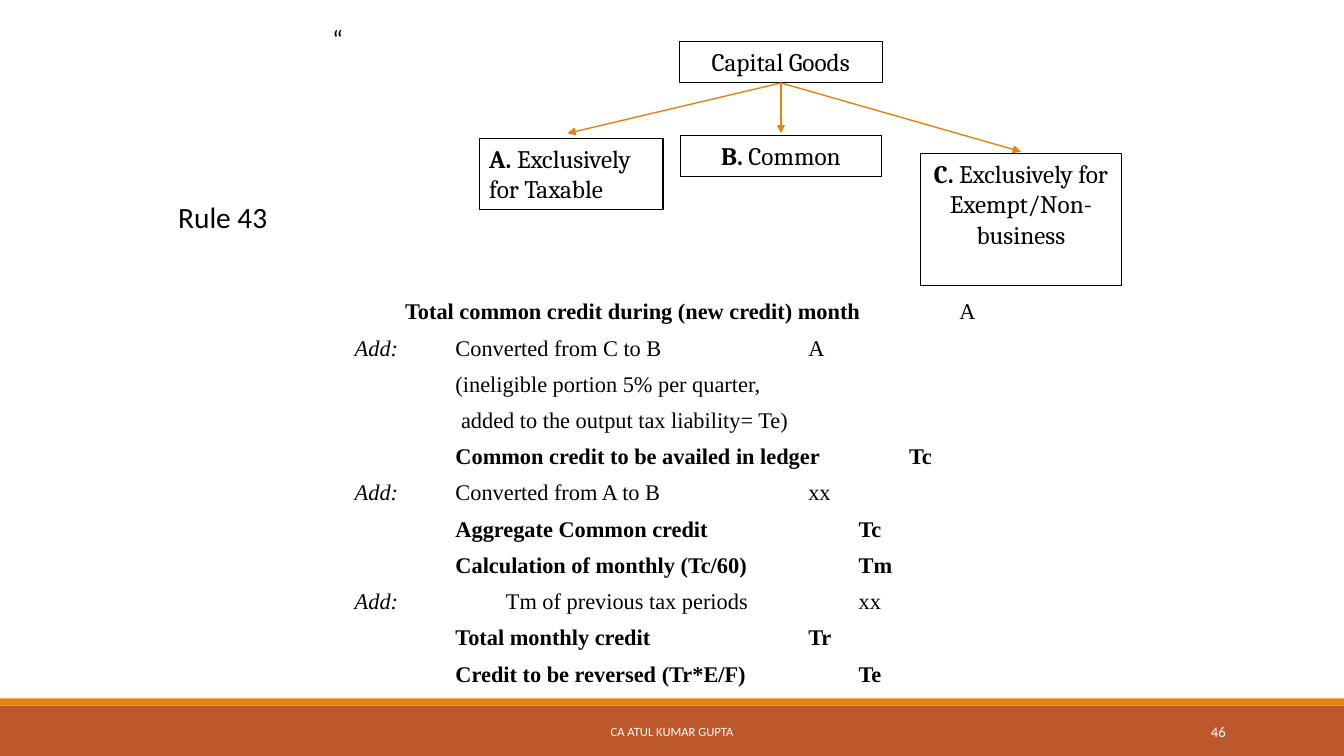
import pptx
import pptx.util
import pptx.dml.color
import pptx.enum.shapes
import pptx.enum.text
import pptx.oxml.ns
import lxml.etree

Cm = pptx.util.Cm
Pt = pptx.util.Pt
RGBColor = pptx.dml.color.RGBColor
ALIGN = pptx.enum.text.PP_ALIGN
ANCHOR = pptx.enum.text.MSO_ANCHOR
RECTANGLE = pptx.enum.shapes.MSO_SHAPE.RECTANGLE
STRAIGHT = pptx.enum.shapes.MSO_CONNECTOR.STRAIGHT
qn = pptx.oxml.ns.qn

BLACK = RGBColor(0x00, 0x00, 0x00)
WHITE = RGBColor(0xFF, 0xFF, 0xFF)
RUST = RGBColor(0xBD, 0x58, 0x2C)
ORANGE = RGBColor(0xE4, 0x83, 0x12)
TAB = 1.27  # width of one tab step in cm


def set_font(para, name, size, color):
    para.font.name = name
    para.font.size = Pt(size)
    para.font.color.rgb = color


def add_rectangle(left, top, width, height):
    box = page.shapes.add_shape(RECTANGLE, Cm(left), Cm(top), Cm(width), Cm(height))
    box.shadow.inherit = False
    return box


deck = pptx.Presentation()
deck.slide_width = Cm(33.87)
deck.slide_height = Cm(19.05)
page = deck.slides.add_slide(deck.slide_layouts[6])

# Footer bands
for top, height, color in [(17.78, 1.27, RUST), (17.6, 0.18, ORANGE)]:
    band = add_rectangle(0, top, 33.87, height)
    band.fill.solid()
    band.fill.fore_color.rgb = color
    band.line.fill.background()

# Opening quote, rule title, footer and page number
labels = [
    ("“", 8.13, 0.46, 21.72, 1.2, 18, BLACK, ALIGN.JUSTIFY, ANCHOR.TOP),
    ("Rule 43", 4.24, 4.88, 5.46, 1.14, 21, BLACK, ALIGN.LEFT, ANCHOR.TOP),
    ("CA ATUL KUMAR GUPTA", 10.24, 17.93, 13.39, 1.02, 9, WHITE, ALIGN.CENTER, ANCHOR.MIDDLE),
    ("46", 27.51, 17.93, 3.63, 1.02, 10.5, WHITE, ALIGN.RIGHT, ANCHOR.MIDDLE),
]
for text, left, top, width, height, size, color, align, anchor in labels:
    frame = page.shapes.add_textbox(Cm(left), Cm(top), Cm(width), Cm(height)).text_frame
    frame.word_wrap = True
    frame.vertical_anchor = anchor
    para = frame.paragraphs[0]
    para.text = text
    para.alignment = align
    set_font(para, "Calibri", size, color)

# Boxes of the capital goods tree
tree = [
    ("", "Capital Goods", 17.12, 1.04, 5.11, 1.04, ALIGN.CENTER),
    ("A. ", "Exclusively for Taxable", 12.08, 3.49, 4.63, 1.8, ALIGN.LEFT),
    ("B. ", "Common", 17.14, 3.42, 5.08, 1.04, ALIGN.CENTER),
    ("C. ", "Exclusively for Exempt/Non-business", 23.19, 3.87, 5.08, 3.33, ALIGN.CENTER),
]
for letter, text, left, top, width, height, align in tree:
    box = add_rectangle(left, top, width, height)
    box.fill.background()
    box.line.color.rgb = BLACK
    box.line.width = Pt(0.75)
    frame = box.text_frame
    frame.word_wrap = True
    frame.vertical_anchor = ANCHOR.TOP
    para = frame.paragraphs[0]
    para.alignment = align
    set_font(para, "Cambria", 18, BLACK)
    if letter:
        span = para.add_run()
        span.text = letter
        span.font.bold = True
    para.add_run().text = text

# Arrows from the root to the branches
for end_x, end_y in [(14.3, 3.36), (19.68, 3.36), (25.73, 3.82)]:
    arrow = page.shapes.add_connector(STRAIGHT, Cm(19.68), Cm(2.09), Cm(end_x), Cm(end_y))
    arrow.line.color.rgb = ORANGE
    arrow.line.width = Pt(1)
    line = arrow.line._get_or_add_ln()
    lxml.etree.SubElement(line, qn("a:tailEnd"), type="triangle")
    lxml.etree.SubElement(arrow._element.spPr, qn("a:effectLst"))

# Credit computation: label, item, value, tab steps of item and value, bold item, bold value
credits = [
    ("", "Total common credit during (new credit) month", "A", 1, 12, True, False),
    ("Add:", "Converted from C to B", "A", 2, 9, False, False),
    ("", "(ineligible portion 5% per quarter,", "", 2, 9, False, False),
    ("", " added to the output tax liability= Te)", "", 2, 9, False, False),
    ("", "Common credit to be availed in ledger", "Tc", 2, 11, True, True),
    ("Add:", "Converted from A to B", "xx", 2, 9, False, False),
    ("", "Aggregate Common credit", "Tc", 2, 10, True, True),
    ("", "Calculation of monthly (Tc/60)", "Tm", 2, 10, True, True),
    ("Add:", "Tm of previous tax periods", "xx", 3, 10, False, False),
    ("", "Total monthly credit", "Tr", 2, 9, True, True),
    ("", "Credit to be reversed (Tr*E/F)", "Te", 2, 10, True, True),
]
frame = page.shapes.add_textbox(Cm(8.69), Cm(7.37), Cm(19.94), Cm(11.46)).text_frame
frame.word_wrap = True
for number, (label, item, value, item_step, value_step, item_bold, value_bold) in enumerate(credits):
    para = frame.add_paragraph() if number else frame.paragraphs[0]
    stops = lxml.etree.SubElement(para._p.get_or_add_pPr(), qn("a:tabLst"))
    for step in (item_step, value_step):
        lxml.etree.SubElement(stops, qn("a:tab"), pos=str(int(Cm(step * TAB))), algn="l")
    para.space_before = Pt(6.7)
    set_font(para, "Times New Roman", 16, BLACK)
    parts = [(label, False, True), ("\t" + item, item_bold, False)]
    if value:
        parts.append(("\t" + value, value_bold, False))
    for text, bold, italic in parts:
        if text:
            span = para.add_run()
            span.text = text
            span.font.bold = bold
            span.font.italic = italic

deck.save("out.pptx")
